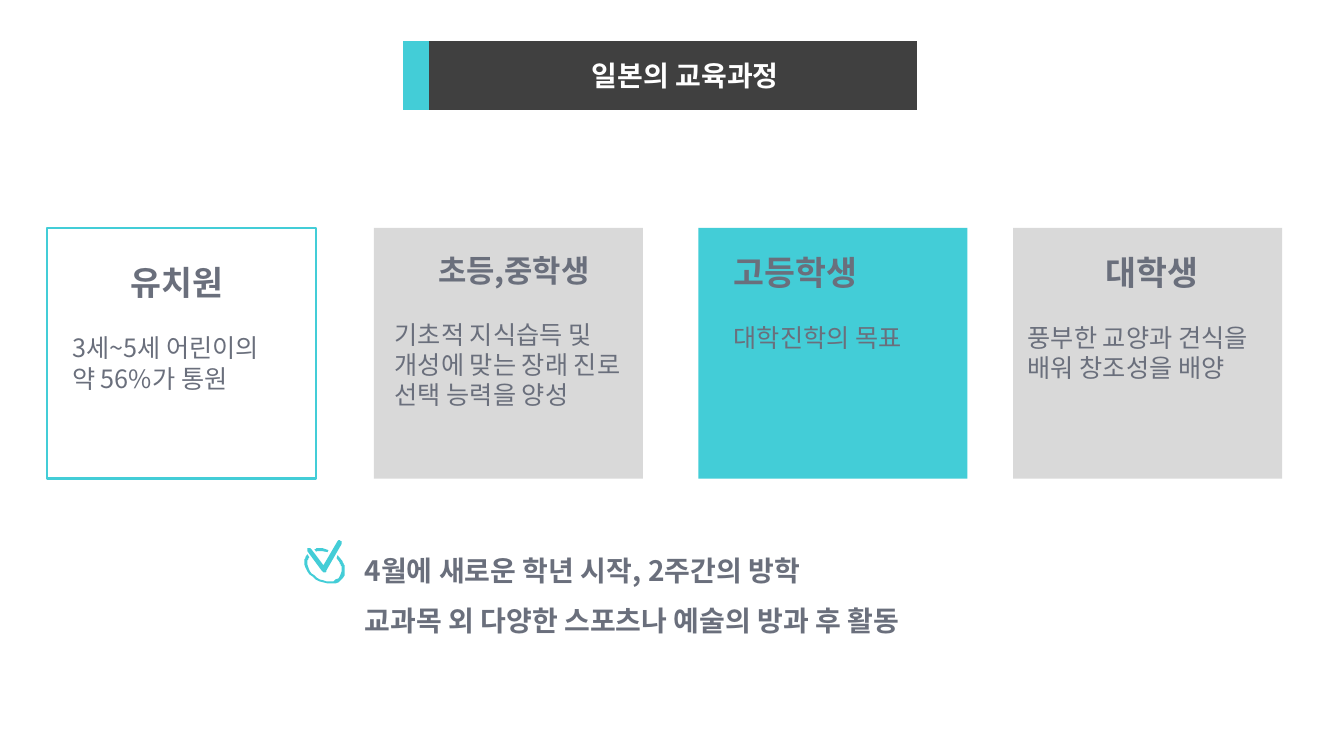
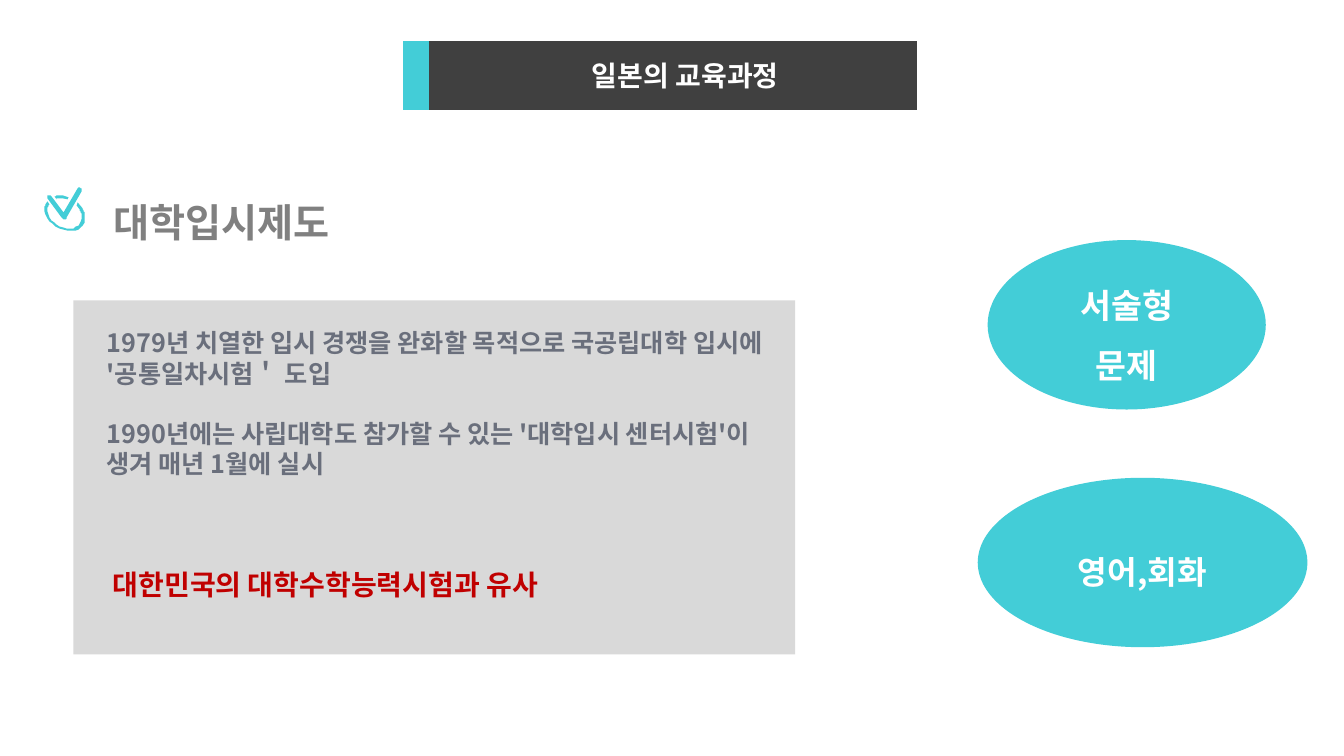
from lxml import etree
from pptx import Presentation
from pptx.dml.color import RGBColor
from pptx.enum.shapes import MSO_SHAPE
from pptx.enum.text import MSO_ANCHOR, PP_ALIGN
from pptx.oxml.ns import qn
from pptx.util import Cm, Pt

RECT, OVAL = MSO_SHAPE.RECTANGLE, MSO_SHAPE.OVAL
LEFT, MID = PP_ALIGN.LEFT, PP_ALIGN.CENTER
CENTER = MSO_ANCHOR.MIDDLE

FONT = "Noto Sans CJK KR"
WHITE, CYAN, DARK = "FFFFFF", "43CDD7", "404040"
PALE, SLATE, GREY, RED = "D9D9D9", "6A6F7C", "808080", "C00000"
GAP = 21.6  # points between a heading and its body

# Tick icon, in hundredths of an inch: two numbers are a line, six a curve
TICK = [
    [(33, 15), (38, 21), (39, 23, 40, 26, 40, 28), (42, 38, 34, 45, 23, 43),
     (11, 42, 2, 33, 0, 24), (0, 21, 0, 19, 1, 17), (3, 14), (5, 17), (4, 18),
     (3, 20, 3, 22, 3, 24), (4, 32, 13, 40, 22, 41), (32, 42, 38, 36, 37, 28),
     (37, 26, 36, 24, 35, 22), (32, 18)],
    [(18, 8), (24, 10), (23, 12), (18, 11), (16, 11, 14, 11, 12, 11),
     (12, 12), (10, 9), (13, 8, 15, 8, 18, 8)],
    [(34, 0), (35, 0, 35, 0, 36, 1), (37, 1, 38, 3, 37, 4), (22, 30),
     (22, 31, 22, 31, 21, 32), (19, 32), (17, 30), (3, 11),
     (2, 10, 3, 8, 4, 8), (5, 7, 6, 8, 7, 9), (19, 25), (33, 1)],
]


def color(code):
    return RGBColor.from_string(code)


def trace(steps, parts=8):
    """Turn lines and Bézier curves into a list of points."""
    points = [steps[0]]
    for step in steps[1:]:
        if len(step) == 2:
            points.append(step)
            continue
        ends = list(zip((points[-1] + step)[::2], (points[-1] + step)[1::2]))
        for i in range(1, parts + 1):
            t = i / parts
            mix = ((1 - t) ** 3, 3 * t * (1 - t) ** 2,
                   3 * t * t * (1 - t), t ** 3)
            points.append(tuple(sum(m * e[axis] for m, e in zip(mix, ends))
                                for axis in (0, 1)))
    return points


class Deck:
    def __init__(self):
        self.prs = Presentation()
        self.prs.slide_width, self.prs.slide_height = Cm(33.87), Cm(19.05)

    def page(self, title):
        self.slide = self.prs.slides.add_slide(self.prs.slide_layouts[6])
        band = self.shape(RECT, 10.16, 1.04, 12.95, 1.74, DARK)
        band.fill.gradient()
        band.fill.gradient_angle = 180
        for stop, code in zip(band.fill.gradient_stops, (DARK, CYAN)):
            stop.position = 0.95
            stop.color.rgb = color(code)
        band.text_frame.margin_left = Cm(1.52)
        self.label(band, [(title, 20, True)], WHITE, MID)

    def shape(self, kind, x, y, w, h, fill, line=None):
        item = self.slide.shapes.add_shape(kind, Cm(x), Cm(y), Cm(w), Cm(h))
        self.paint(item, fill)
        if line:
            item.line.color.rgb = color(line)
            item.line.width = Pt(1.5)
        return item

    def paint(self, item, fill):
        item.shadow.inherit = False
        item.fill.solid()
        item.fill.fore_color.rgb = color(fill)
        item.line.fill.background()

    def label(self, item, rows, code, align=LEFT, lead=None, gap=0):
        """Fill a shape with rows of (text, size, bold)."""
        frame = item.text_frame
        frame.word_wrap = True
        for i, (text, size, bold) in enumerate(rows):
            para = frame.add_paragraph() if i else frame.paragraphs[0]
            para.text = text
            para.alignment = align if i == 0 else LEFT
            para.space_before = Pt(gap if i else 0)
            if lead:
                para.line_spacing = lead
            font = para.font
            font.size, font.bold, font.name = Pt(size), bold, FONT
            font.color.rgb = color(code)
            # Hangul takes the East Asian typeface
            props = para._p.find(".//" + qn("a:defRPr"))
            etree.SubElement(props, qn("a:ea")).set("typeface", FONT)

    def text(self, x, y, w, h, rows, code=SLATE, **style):
        box = self.slide.shapes.add_textbox(Cm(x), Cm(y), Cm(w), Cm(h))
        self.label(box, rows, code, **style)

    def oval(self, x, y, w, text, size):
        item = self.shape(OVAL, x, y, w, 4.27, CYAN)
        frame = item.text_frame
        frame.margin_left = frame.margin_right = Cm(0.51)
        frame.vertical_anchor = CENTER
        self.label(item, [(text, size, True)], WHITE, MID, 1.5)

    def tick(self, x, y):
        first, *rest = [trace(part) for part in TICK]
        pen = self.slide.shapes.build_freeform(*first[0], scale=Cm(0.0254))
        pen.add_line_segments(first[1:])
        for part in rest:
            pen.move_to(*part[0])
            pen.add_line_segments(part[1:])
        self.paint(pen.convert_to_shape(Cm(x), Cm(y)), CYAN)


def main():
    deck = Deck()
    title = "일본의 교육과정"

    # School stages
    deck.page(title)
    cards = [
        (1.19, WHITE, CYAN, 1.57, 6.48, 5.79, MID, 24,
         "유치원", "3세~5세 어린이의 약 56%가 통원"),
        (9.42, PALE, None, 9.7, 6.22, 6.5, MID, 22,
         "초등,중학생", "기초적 지식습득 및 개성에 맞는 장래 진로 선택 능력을 양성"),
        (17.6, CYAN, None, 18.24, 6.22, 5.79, LEFT, 24,
         "고등학생", "대학진학의 목표"),
        (25.53, PALE, None, 25.65, 6.22, 6.78, MID, 24,
         "대학생", "풍부한 교양과 견식을 배워 창조성을 배양"),
    ]
    for x, fill, line, left, top, wide, align, size, head, body in cards:
        deck.shape(RECT, x, 5.74, 6.78, 6.32, fill, line)
        deck.text(left, top, wide, 4.37,
                  [(head, size, True), (body, 18, False)],
                  align=align, gap=GAP)
    deck.text(8.94, 13.39, 19.38, 2.82,
              [("4월에 새로운 학년 시작, 2주간의 방학", 20, True),
               ("교과목 외 다양한 스포츠나 예술의 방과 후 활동", 20, True)],
              lead=1.5)
    deck.tick(7.67, 13.61)

    # University entrance
    deck.page(title)
    deck.shape(RECT, 1.85, 7.57, 18.19, 8.92, PALE)
    deck.text(2.62, 4.27, 18.87, 2.06, [("대학입시제도", 28, True)],
              GREY, lead=1.5)
    deck.tick(1.12, 4.72)
    deck.text(2.44, 8.13, 17.48, 5.64, [
        ("1979년 치열한 입시 경쟁을 완화할 목적으로 국공립대학 입시에 "
         "'공통일차시험＇ 도입", 18, True),
        ("1990년에는 사립대학도 참가할 수 있는 '대학입시 센터시험'이 생겨 "
         "매년 1월에 실시", 18, True)], gap=GAP)
    deck.text(2.59, 14.17, 17.07, 1.12,
              [("대한민국의 대학수학능력시험과 유사", 20, True)], RED)
    deck.oval(24.89, 6.05, 7.01, "서술형 문제", 24)
    deck.oval(24.64, 12.04, 8.31, "영어,회화", 23)

    deck.prs.save("out.pptx")


if __name__ == "__main__":
    main()
